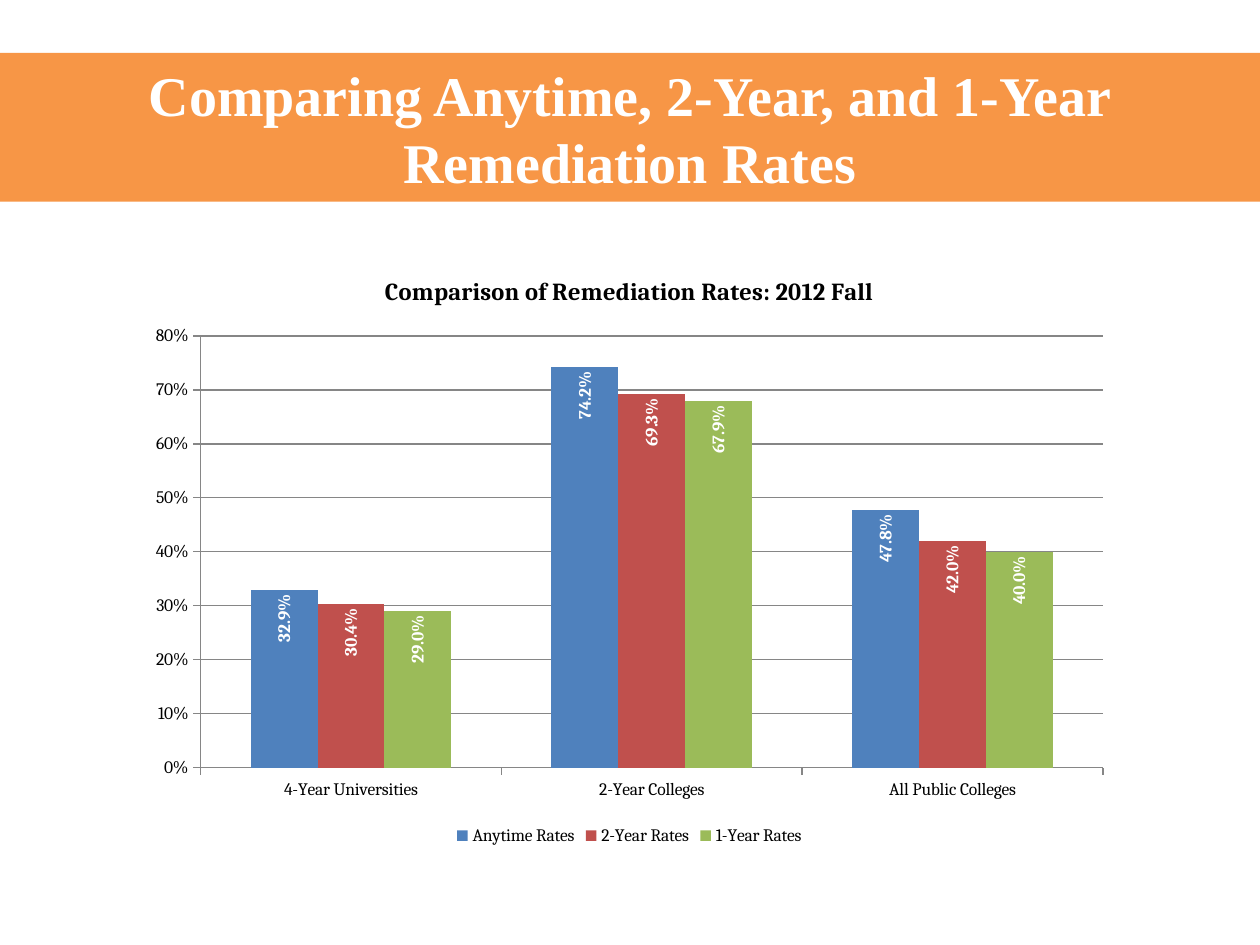
from pptx import Presentation
from pptx.chart.data import CategoryChartData
from pptx.dml.color import RGBColor
from pptx.enum.chart import XL_CHART_TYPE, XL_LABEL_POSITION, XL_LEGEND_POSITION, XL_TICK_MARK
from pptx.enum.shapes import MSO_SHAPE
from pptx.enum.text import MSO_ANCHOR, PP_ALIGN
from pptx.util import Inches, Pt

COLUMN_CLUSTERED = XL_CHART_TYPE.COLUMN_CLUSTERED
INSIDE_END = XL_LABEL_POSITION.INSIDE_END
LEGEND_BOTTOM = XL_LEGEND_POSITION.BOTTOM
TICK_OUTSIDE = XL_TICK_MARK.OUTSIDE
TICK_NONE = XL_TICK_MARK.NONE
RECTANGLE = MSO_SHAPE.RECTANGLE
MIDDLE = MSO_ANCHOR.MIDDLE
CENTER = PP_ALIGN.CENTER

ORANGE = RGBColor(0xF7, 0x96, 0x46)
WHITE = RGBColor(0xFF, 0xFF, 0xFF)
BLACK = RGBColor(0x00, 0x00, 0x00)
GRAY = RGBColor(0x86, 0x86, 0x86)
BLUE = RGBColor(0x4F, 0x81, 0xBD)
RED = RGBColor(0xC0, 0x50, 0x4D)
GREEN = RGBColor(0x9B, 0xBB, 0x59)

TITLE_FONT = "Times New Roman"
CHART_FONT = "Cambria"
QUARTER_TURN_LEFT = "-5400000"

CATEGORIES = ["4-Year Universities", "2-Year Colleges", "All Public Colleges"]
RATES = [
    ("Anytime Rates", [0.329, 0.742, 0.478], BLUE),
    ("2-Year Rates", [0.304, 0.693, 0.42], RED),
    ("1-Year Rates", [0.29, 0.679, 0.4], GREEN),
]


def style_font(font, name, size, color, bold):
    """Set the face, size, colour and weight of a font."""
    font.name = name
    font.size = Pt(size)
    font.color.rgb = color
    font.bold = bold


def add_title_band(slide, left, top, width, height, text):
    """Place the full-width coloured band that holds the slide title."""
    band = slide.shapes.add_shape(RECTANGLE, left, top, width, height)
    band.shadow.inherit = False
    band.fill.solid()
    band.fill.fore_color.rgb = ORANGE
    band.line.fill.background()
    frame = band.text_frame
    frame.word_wrap = True
    frame.vertical_anchor = MIDDLE
    paragraph = frame.paragraphs[0]
    paragraph.text = text
    paragraph.alignment = CENTER
    style_font(paragraph.font, TITLE_FONT, 32, WHITE, True)


def style_axes(chart):
    """Format the category axis and the percentage axis with its gridlines."""
    for axis in (chart.category_axis, chart.value_axis):
        axis.major_tick_mark = TICK_OUTSIDE
        axis.minor_tick_mark = TICK_NONE
        axis.format.line.color.rgb = GRAY
        axis.format.line.width = Pt(0.75)
    value_axis = chart.value_axis
    value_axis.minimum_scale = 0
    value_axis.maximum_scale = 0.8
    value_axis.major_unit = 0.1
    value_axis.tick_labels.number_format = "0%"
    value_axis.tick_labels.number_format_is_linked = False
    value_axis.has_major_gridlines = True
    value_axis.major_gridlines.format.line.color.rgb = GRAY
    value_axis.major_gridlines.format.line.width = Pt(0.75)


def style_series(series, color):
    """Colour one series and give it upright value labels."""
    series.format.fill.solid()
    series.format.fill.fore_color.rgb = color
    labels = series.data_labels
    labels.show_value = True
    labels.position = INSIDE_END
    labels.number_format = "0.0%"
    labels.number_format_is_linked = False
    style_font(labels.font, CHART_FONT, 10, WHITE, True)
    body = labels._element.txPr.bodyPr
    body.set("rot", QUARTER_TURN_LEFT)
    body.set("vert", "horz")


def add_rates_chart(slide, left, top, width, height, title):
    """Place the clustered column chart of remediation rates."""
    data = CategoryChartData(number_format="0.0%")
    data.categories = CATEGORIES
    for name, values, _ in RATES:
        data.add_series(name, values)
    chart = slide.shapes.add_chart(COLUMN_CLUSTERED, left, top, width, height, data).chart
    style_font(chart.font, CHART_FONT, 10, BLACK, False)
    chart.has_title = True
    paragraph = chart.chart_title.text_frame.paragraphs[0]
    paragraph.text = title
    style_font(paragraph.font, CHART_FONT, 14, BLACK, True)
    chart.chart_title.include_in_layout = False
    chart.has_legend = True
    chart.legend.position = LEGEND_BOTTOM
    chart.legend.include_in_layout = False
    style_axes(chart)
    plot = chart.plots[0]
    plot.gap_width = 150
    plot.overlap = 0
    plot.vary_by_categories = False
    for series, (_, _, color) in zip(plot.series, RATES):
        style_series(series, color)


def main():
    """Build the slide and save the presentation."""
    presentation = Presentation()
    presentation.slide_width = Inches(10)
    presentation.slide_height = Inches(7.5)
    slide = presentation.slides.add_slide(presentation.slide_layouts[6])
    add_title_band(
        slide, Inches(0), Inches(0.42), presentation.slide_width, Inches(1.18),
        "Comparing Anytime, 2-Year, and 1-Year Remediation Rates",
    )
    add_rates_chart(
        slide, Inches(1.08), Inches(2), Inches(7.83), Inches(4.75),
        "Comparison of Remediation Rates: 2012 Fall",
    )
    presentation.save("out.pptx")


if __name__ == "__main__":
    main()
